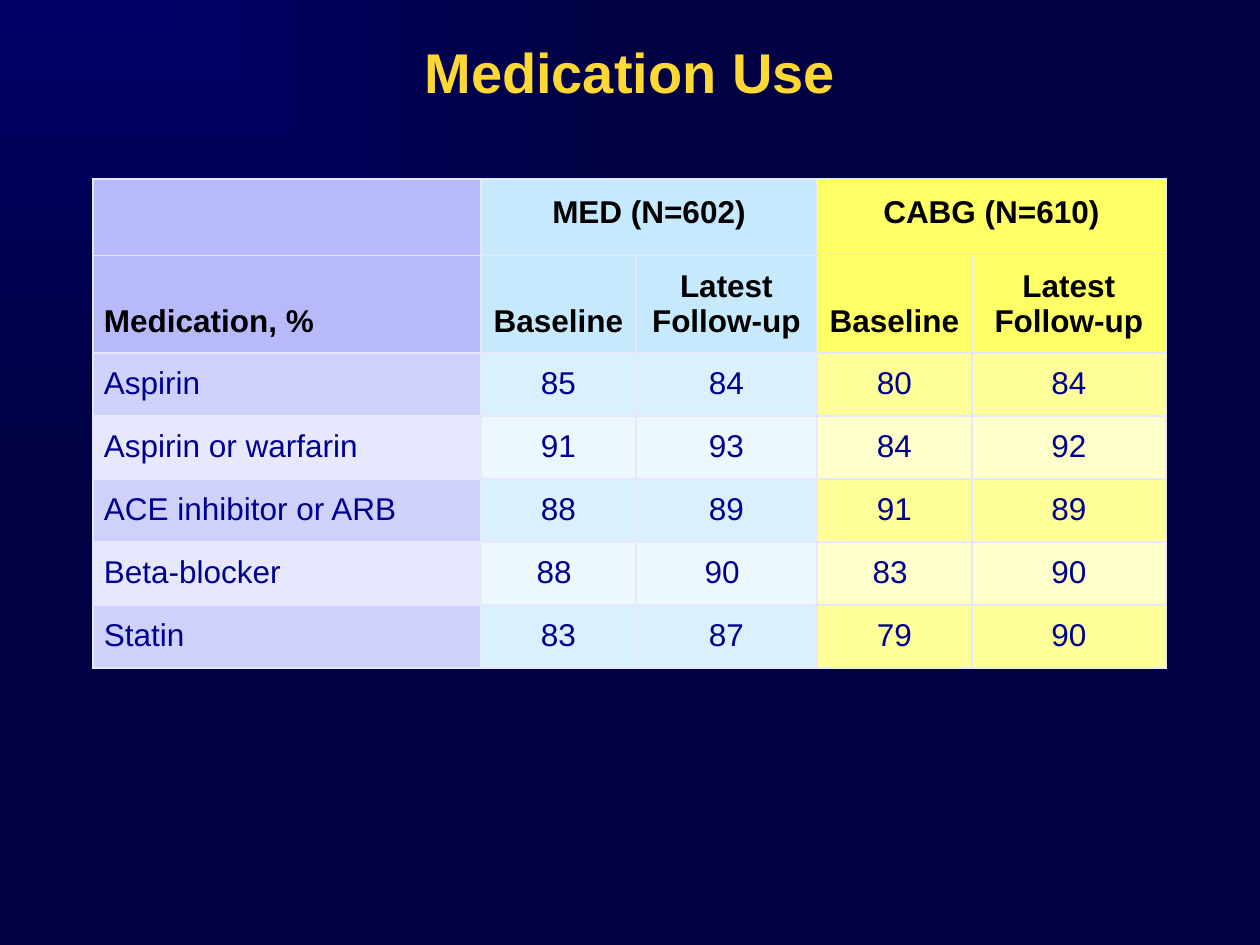
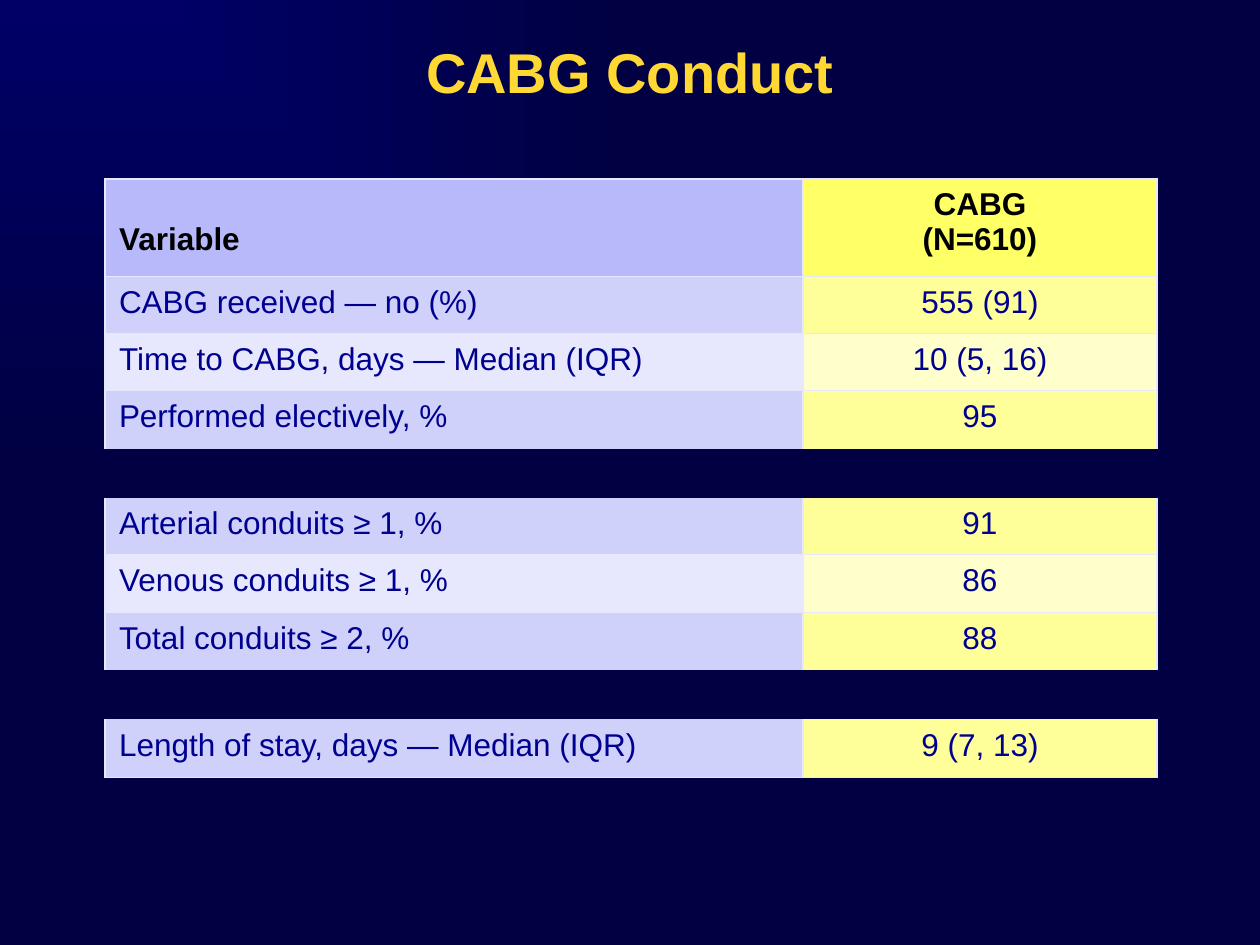
from dataclasses import dataclass
from typing import NamedTuple

import pptx
import pptx.dml.color
import pptx.enum.text
import pptx.oxml
import pptx.oxml.ns
import pptx.util
from lxml import etree

RGBColor = pptx.dml.color.RGBColor
Align = pptx.enum.text.PP_ALIGN
Anchor = pptx.enum.text.MSO_ANCHOR
qn = pptx.oxml.ns.qn

# Scale and shared style
PX_PER_INCH = 126
FONT = "Arial"
GLOW_BLUE = RGBColor(0x00, 0x00, 0x66)
NIGHT_BLUE = RGBColor(0x00, 0x00, 0x43)
TITLE_GOLD = RGBColor(0xFF, 0xD8, 0x33)
HEADER_TEXT = RGBColor(0x00, 0x00, 0x00)
BODY_TEXT = RGBColor(0x00, 0x00, 0x90)
BORDER = RGBColor(0xE7, 0xE8, 0xFD)
NO_STYLE = "{2D5ABB26-0587-4C30-8999-92F81FD0307C}"


class Palette(NamedTuple):
    header: RGBColor
    dark: RGBColor
    light: RGBColor


LABEL = Palette(RGBColor(0xB8, 0xB9, 0xFA), RGBColor(0xCF, 0xD1, 0xFB), RGBColor(0xE7, 0xE8, 0xFD))
MED = Palette(RGBColor(0xC7, 0xE9, 0xFD), RGBColor(0xDA, 0xF1, 0xFD), RGBColor(0xEC, 0xF8, 0xFE))
CABG = Palette(RGBColor(0xFF, 0xFF, 0x66), RGBColor(0xFF, 0xFF, 0x99), RGBColor(0xFF, 0xFF, 0xCC))


@dataclass
class TableSlide:
    title: str
    left: int
    column_widths: list[int]
    row_heights: list[int]
    palettes: list[Palette]
    rows: list[tuple[str, ...]]  # an empty tuple is a gap between groups
    side_margin: int
    top_margin: int
    header_bottoms: list[int]  # bottom margin of each header row
    merges: tuple[tuple[int, int], ...] = ()  # first and last column in the top row


TABLE_TOP = 179
BODY_BOTTOM = 8

MEDICATION_USE = TableSlide(
    title="Medication Use",
    left=93,
    column_widths=[388, 155, 181, 155, 194],
    row_heights=[73, 97] + [63] * 5,
    palettes=[LABEL, MED, MED, CABG, CABG],
    rows=[
        ("", "MED (N=602)", "", "CABG (N=610)", ""),
        ("Medication, %", "Baseline", "Latest\vFollow-up", "Baseline", "Latest Follow-up"),
        ("Aspirin", "85", "84", "80", "84"),
        ("Aspirin or warfarin", "91", "93", "84", "92"),
        ("ACE inhibitor or ARB", "88", "89", "91", "89"),
        ("Beta-blocker", "88 ", "90 ", "83 ", "90"),
        ("Statin", "83", "87", "79", "90"),
    ],
    side_margin=11,
    top_margin=13,
    header_bottoms=[25, 14],
    merges=((1, 2), (3, 4)),
)

CABG_CONDUCT = TableSlide(
    title="CABG Conduct",
    left=105,
    column_widths=[698, 354],
    row_heights=[97, 57, 57, 58, 49, 57, 58, 58, 49, 58],
    palettes=[LABEL, CABG],
    rows=[
        ("Variable", "CABG\v(N=610)"),
        ("CABG received — no (%)", "555 (91)"),
        ("Time to CABG, days — Median (IQR)", "10 (5, 16)"),
        ("Performed electively, %", "95"),
        (),
        ("Arterial conduits ≥ 1, %", "91"),
        ("Venous conduits ≥ 1, %", "86"),
        ("Total conduits ≥ 2, %", "88"),
        (),
        ("Length of stay, days — Median (IQR)", "9 (7, 13)"),
    ],
    side_margin=14,
    top_margin=8,
    header_bottoms=[19],
)


def px(length: int) -> pptx.util.Emu:
    return pptx.util.Emu(round(length * 914400 / PX_PER_INCH))


def format_text(text_frame, text: str, size: int, color: RGBColor, bold: bool, align: Align) -> None:
    text_frame.text = text
    for paragraph in text_frame.paragraphs:
        paragraph.alignment = align
        for run in paragraph.runs:
            run.font.name = FONT
            run.font.size = pptx.util.Pt(size)
            run.font.bold = bold
            run.font.color.rgb = color


def set_background(master) -> None:
    """Radiate the gradient from the top left corner on every slide."""
    fill = master.background.fill
    fill.gradient()
    for stop, color in zip(fill.gradient_stops, (GLOW_BLUE, NIGHT_BLUE)):
        stop.color.rgb = color
    fill.gradient_stops[0].position = 0
    fill.gradient_stops[1].position = 1
    gradient = master.element.find(".//" + qn("a:gradFill"))
    gradient.remove(gradient.find(qn("a:lin")))
    path = etree.SubElement(gradient, qn("a:path"), {"path": "rect"})
    etree.SubElement(path, qn("a:fillToRect"), {"r": "100000", "b": "100000"})


def set_borders(cell, sides: str) -> None:
    properties = cell._tc.get_or_add_tcPr()
    for side in "LRTB":
        line = etree.SubElement(properties, qn(f"a:ln{side}"), {"w": str(pptx.util.Pt(1))})
        if side in sides:
            fill = etree.SubElement(line, qn("a:solidFill"))
            etree.SubElement(fill, qn("a:srgbClr"), {"val": str(BORDER)})
        else:
            etree.SubElement(line, qn("a:noFill"))


def add_title(slide, text: str) -> None:
    title = slide.shapes.title
    title.left, title.top, title.width, title.height = px(42), px(32), px(1176), px(50)
    frame = title.text_frame
    frame.auto_size = pptx.enum.text.MSO_AUTO_SIZE.NONE
    frame.vertical_anchor = Anchor.TOP
    frame.margin_left = frame.margin_right = frame.margin_bottom = 0
    frame.margin_top = px(5)
    format_text(frame, text, 32, TITLE_GOLD, True, Align.CENTER)


def format_row(table, content: TableSlide, row: int, dark: bool) -> None:
    rows = content.rows
    is_header = row < len(content.header_bottoms)
    sides = "LR"
    if row == 0 or rows[row - 1]:
        sides += "T"
    if row == len(rows) - 1 or rows[row + 1]:
        sides += "B"
    for column, (text, palette) in enumerate(zip(rows[row], content.palettes)):
        cell = table.cell(row, column)
        set_borders(cell, sides)
        cell.fill.solid()
        cell.fill.fore_color.rgb = palette.header if is_header else palette.dark if dark else palette.light
        cell.margin_left = cell.margin_right = px(content.side_margin)
        cell.margin_top = px(content.top_margin)
        cell.margin_bottom = px(content.header_bottoms[row] if is_header else BODY_BOTTOM)
        cell.vertical_anchor = Anchor.BOTTOM if is_header else Anchor.TOP
        format_text(cell.text_frame, text, 18, HEADER_TEXT if is_header else BODY_TEXT,
                    is_header, Align.CENTER if column else Align.LEFT)


def add_table(slide, content: TableSlide) -> None:
    widths, heights = content.column_widths, content.row_heights
    table = slide.shapes.add_table(len(heights), len(widths), px(content.left), px(TABLE_TOP),
                                   px(sum(widths)), px(sum(heights))).table
    table.first_row = table.horz_banding = False
    table._tbl.find(".//" + qn("a:tableStyleId")).text = NO_STYLE
    for column, width in zip(table.columns, widths):
        column.width = px(width)

    # Bands start dark again after every gap
    dark = True
    for row, height in enumerate(heights):
        table.rows[row].height = px(height)
        if content.rows[row]:
            format_row(table, content, row, dark)
            dark = row < len(content.header_bottoms) or not dark
        else:
            for cell in table.rows[row].cells:
                set_borders(cell, "")
                cell.fill.background()
                cell.margin_top = cell.margin_bottom = 0
            dark = True
    for first, last in content.merges:
        table.cell(0, first).merge(table.cell(0, last))


def main() -> None:
    presentation = pptx.Presentation()
    presentation.slide_width, presentation.slide_height = px(1260), px(945)
    set_background(presentation.slide_master)
    for content in (MEDICATION_USE, CABG_CONDUCT):
        slide = presentation.slides.add_slide(presentation.slide_layouts[5])
        add_title(slide, content.title)
        add_table(slide, content)
    presentation.save("out.pptx")


if __name__ == "__main__":
    main()
